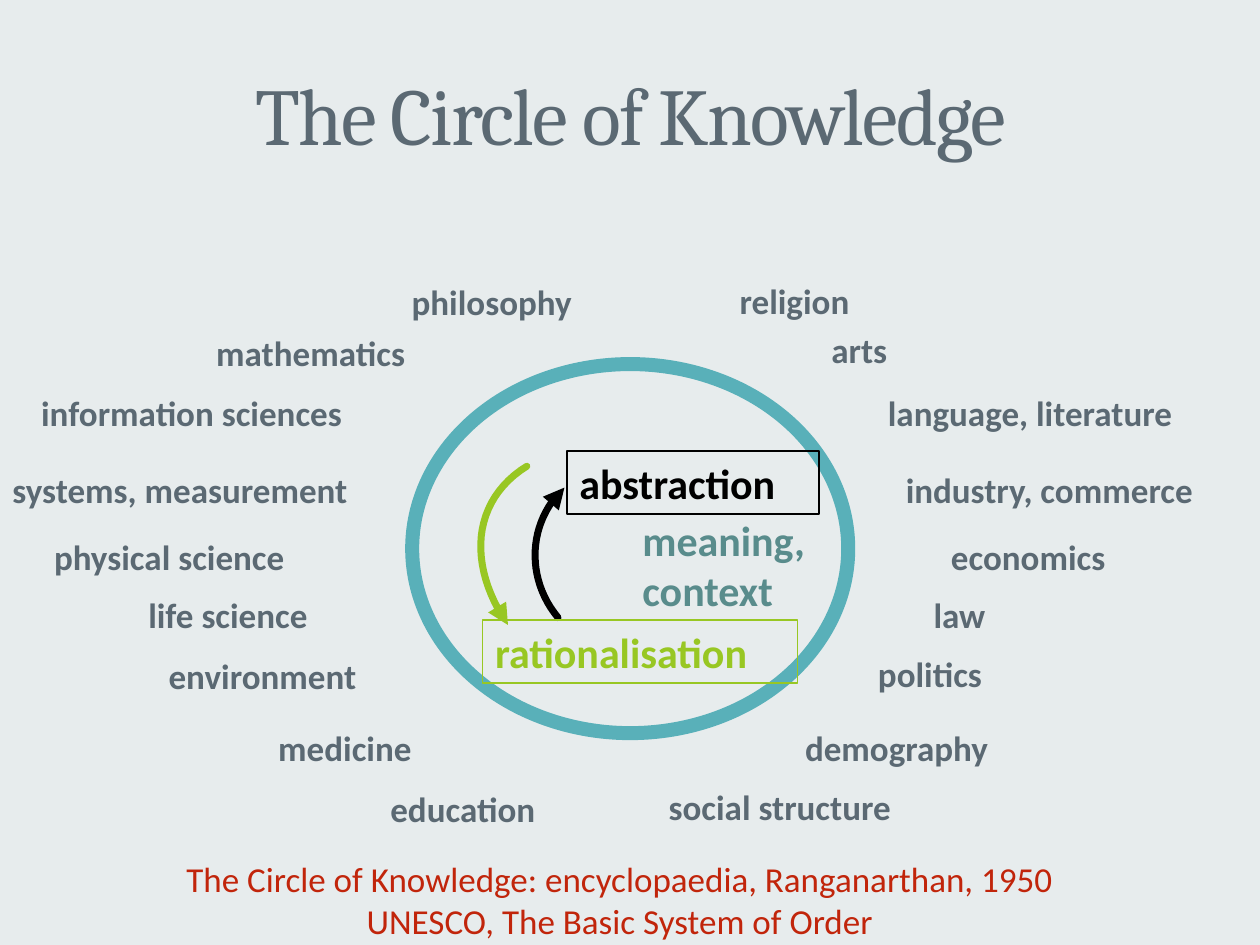
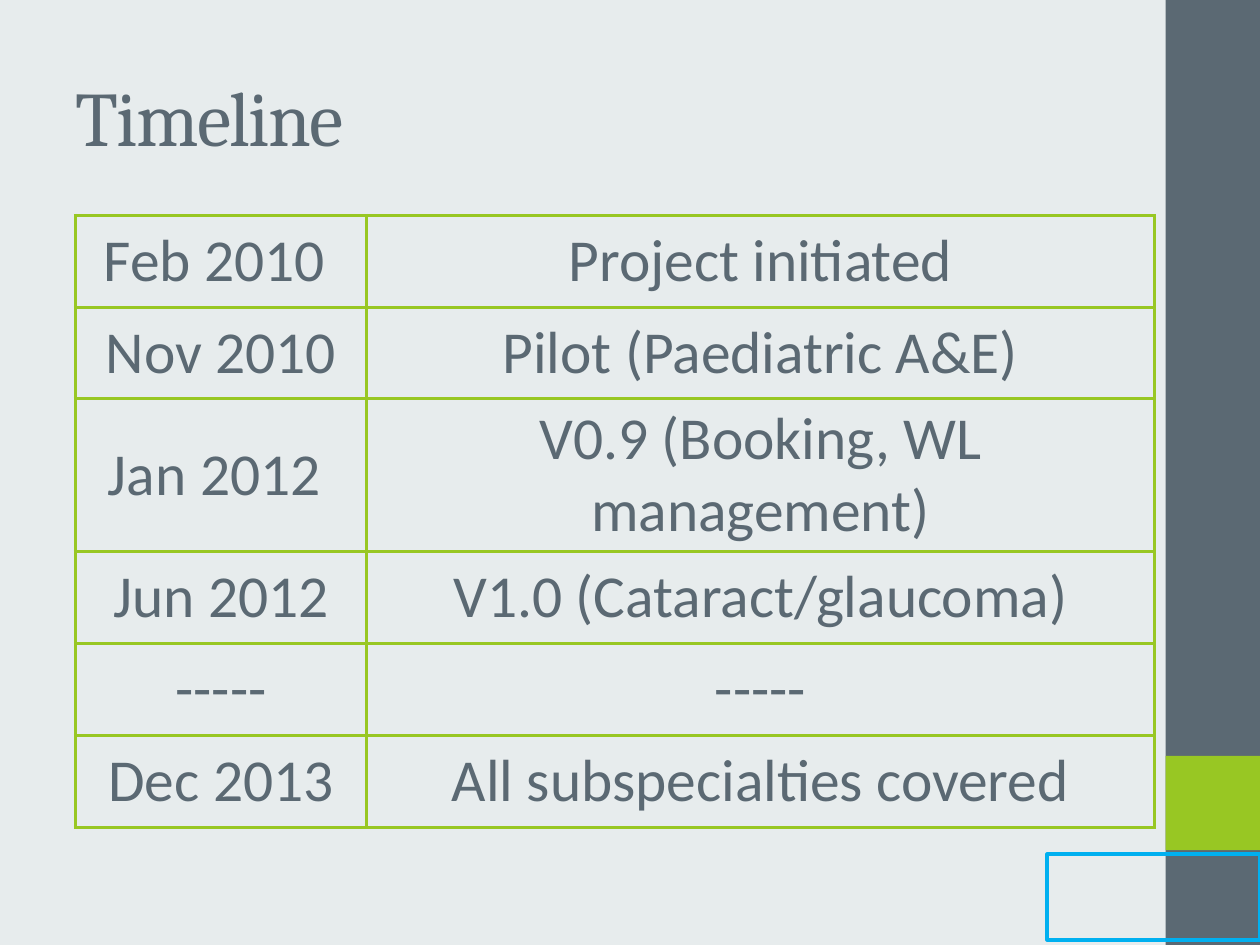
from lxml import etree
from pptx import Presentation
from pptx.dml.color import RGBColor
from pptx.enum.shapes import MSO_SHAPE
from pptx.enum.text import MSO_ANCHOR, PP_ALIGN
from pptx.oxml.ns import qn
from pptx.util import Cm, Pt

PALE = RGBColor(0xE7, 0xEC, 0xED)
SLATE = RGBColor(0x5B, 0x69, 0x73)
GREEN = RGBColor(0x98, 0xC7, 0x23)
TEAL = RGBColor(0x59, 0xB0, 0xB9)
SAGE = RGBColor(0x59, 0x8C, 0x8C)
RED = RGBColor(0xC1, 0x25, 0x0B)
BLACK = RGBColor(0, 0, 0)
SKY = RGBColor(0x00, 0xB0, 0xF0)

OVAL, RECT = MSO_SHAPE.OVAL, MSO_SHAPE.RECTANGLE
LEFT, CENTER = PP_ALIGN.LEFT, PP_ALIGN.CENTER
TOP, MIDDLE = MSO_ANCHOR.TOP, MSO_ANCHOR.MIDDLE

TITLE_ONLY = 5
ARC_STEPS = 24
LABEL_HEIGHT = 1.09

TITLE = {"name": "Cambria"}
TOPIC = {"name": "Calibri", "size": Pt(20), "bold": True}
CONCEPT = {"name": "Calibri", "size": Pt(24), "bold": True}
CAPTION = {"name": "Calibri", "size": Pt(20)}
ENTRY = {"name": "Calibri", "size": Pt(34)}

TOPIC_ROWS = [
    (("philosophy", 8.05, 0.04, 4.5), ("religion", 14.66, 0.01, 3.2)),
    (("mathematics", 4.11, 1.05, 5.31), ("arts", 16.51, 1, 2.26)),
    (("information sciences", 0.58, 2.27, 7.85), ("language, literature", 17.65, 2.27, 7.11)),
    (("systems, measurement", 0, 3.82, 9.6), ("industry, commerce", 18.01, 3.82, 7.39)),
    (("physical science", 0.84, 5.17, 7.11), ("economics", 18.92, 5.17, 4.42)),
    (("life science", 2.74, 6.34, 4.62), ("law", 18.57, 6.34, 3.4)),
    (("environment", 3.15, 7.56, 5.05), ("politics", 17.45, 7.53, 3.2)),
    (("medicine", 5.36, 9.03, 3.96), ("demography", 15.98, 9.03, 5.26)),
    (("education", 7.62, 10.25, 4.32), ("social structure", 13.23, 10.22, 6.25)),
]

MILESTONES = [
    ("Feb 2010 ", "Project initiated", 1.85),
    ("Nov 2010", "Pilot (Paediatric A&E)", 1.85),
    ("Jan 2012 ", "V0.9 (Booking, WL management)", 3),
    ("Jun 2012", "V1.0 (Cataract/glaucoma)", 1.85),
    ("-----", "-----", 1.85),
    ("Dec 2013", "All subspecialties covered", 1.85),
]


def assign(target, values):
    for name, value in values.items():
        setattr(target, name, value)


def inside(box, left, top, width, height):
    return box[0] + left, box[1] + top, width, height


def to_cm(box):
    return [Cm(length) for length in box]


def write(frame, text, font, color, align=LEFT, anchor=TOP, wrap=True):
    assign(frame, {"text": text, "word_wrap": wrap, "vertical_anchor": anchor})
    for paragraph in frame.paragraphs:
        paragraph.alignment = align
        for run in paragraph.runs:
            assign(run.font, font)
            run.font.color.rgb = color


def add_text(slide, box, text, font, color, **layout):
    label = slide.shapes.add_textbox(*to_cm(box))
    write(label.text_frame, text, font, color, **layout)


def paint(shape, fill=None, line=None, width=1):
    shape.shadow.inherit = False
    for part, color in ((shape.fill, fill), (shape.line.fill, line)):
        if color is None:
            part.background()
        else:
            part.solid()
            part.fore_color.rgb = color
    if line is not None:
        shape.line.width = Pt(width)


def add_shape(slide, box, kind=RECT, **look):
    shape = slide.shapes.add_shape(kind, *to_cm(box))
    paint(shape, **look)
    return shape


def add_title(slide, box, text, size, align):
    title = slide.shapes.title
    assign(title, dict(zip(("left", "top", "width", "height"), to_cm(box))))
    write(title.text_frame, text, TITLE | {"size": Pt(size)}, SLATE, align, MIDDLE)
    for run in title.text_frame.paragraphs[0].runs:
        run.font._element.set("spc", "-100")


def add_curved_arrow(slide, box, controls, color):
    points = []
    for step in range(ARC_STEPS + 1):
        t = step / ARC_STEPS
        weights = ((1 - t) ** 3, 3 * t * (1 - t) ** 2, 3 * t * t * (1 - t), t ** 3)
        points.append([
            Cm(origin + sum(w * c for w, c in zip(weights, axis)))
            for origin, axis in zip(box, zip(*controls))
        ])
    builder = slide.shapes.build_freeform(*points[0])
    builder.add_line_segments(points[1:], close=False)
    arrow = builder.convert_to_shape()
    paint(arrow, line=color, width=4)
    outline = arrow._element.spPr.find(qn("a:ln"))
    outline.set("cap", "rnd")
    etree.SubElement(outline, qn("a:round"))
    etree.SubElement(outline, qn("a:tailEnd"), type="triangle")


def add_topics(slide, box):
    for row in TOPIC_ROWS:
        for text, left, top, width in row:
            add_text(slide, inside(box, left, top, width, LABEL_HEIGHT), text, TOPIC, SLATE)


def add_core(slide, box):
    add_shape(slide, box, OVAL, line=TEAL, width=8)
    add_curved_arrow(slide, box, [(2.31, 2.06), (1.2, 2.75), (1.1, 4.05), (1.93, 5.26)], GREEN)
    add_curved_arrow(slide, box, [(2.94, 5.11), (2.28, 4.32), (2.33, 3.18), (3.07, 2.49)], BLACK)
    for text, color, left, top, width in (
        ("rationalisation", GREEN, 1.42, 5.16, 6.35),
        ("abstraction", BLACK, 3.12, 1.75, 5.08),
    ):
        concept = add_shape(slide, inside(box, left, top, width, 1.27), line=color)
        write(concept.text_frame, text, CONCEPT, color, anchor=MIDDLE)
    add_text(slide, inside(box, 4.39, 2.9, 3.84, 2.31), "meaning,\ncontext",
             CONCEPT, SAGE, wrap=False)


def add_side_band(slide, box):
    add_shape(slide, box, fill=SLATE)
    add_shape(slide, inside(box, 0, 15.24, box[2], box[2]), fill=GREEN)


def add_borders(cell):
    properties = cell._tc.get_or_add_tcPr()
    for position, side in enumerate(("lnL", "lnR", "lnT", "lnB")):
        border = etree.Element(qn(f"a:{side}"), w=str(Pt(2)))
        fill = etree.SubElement(border, qn("a:solidFill"))
        etree.SubElement(fill, qn("a:srgbClr"), val=str(GREEN))
        properties.insert(position, border)


def add_timeline(slide, box):
    table = slide.shapes.add_table(len(MILESTONES), 2, *to_cm(box)).table
    assign(table, {"first_row": False, "horz_banding": False})
    date_width = 5.87
    for column, width in zip(table.columns, (date_width, box[2] - date_width)):
        column.width = Cm(width)
    margins = {f"margin_{side}": Cm(0.08) for side in ("left", "right", "top", "bottom")}
    for row, (date, event, height) in zip(table.rows, MILESTONES):
        row.height = Cm(height)
        for cell, text in zip(row.cells, (date, event)):
            write(cell.text_frame, text, ENTRY, SLATE, CENTER)
            assign(cell, margins | {"vertical_anchor": MIDDLE})
            cell.fill.background()
            add_borders(cell)


def build_knowledge_slide(slide):
    add_title(slide, (1.73, 0.74, 21.97, 3.07), "The Circle of Knowledge", 46, CENTER)
    add_topics(slide, (0, 5.5, 25.4, 11.35))
    add_core(slide, (8.31, 7.34, 8.79, 7.44))
    add_text(slide, (2.54, 17.17, 19.91, 1.93),
             "The Circle of Knowledge: encyclopaedia, Ranganarthan, 1950\n"
             "UNESCO, The Basic System of Order", CAPTION, RED, align=CENTER)


def build_timeline_slide(slide):
    add_side_band(slide, (23.5, 0, 1.9, 19.05))
    add_title(slide, (1.27, 0.74, 21.16, 3.18), "Timeline", 44, LEFT)
    add_timeline(slide, (1.52, 4.34, 21.75, 12.25))
    add_shape(slide, (21.11, 17.22, 4.29, 1.73), line=SKY, width=2)


def main():
    deck = Presentation()
    assign(deck, {"slide_width": Cm(25.4), "slide_height": Cm(19.05)})
    backdrop = deck.slide_master.background.fill
    backdrop.solid()
    backdrop.fore_color.rgb = PALE
    for build in (build_knowledge_slide, build_timeline_slide):
        build(deck.slides.add_slide(deck.slide_layouts[TITLE_ONLY]))
    deck.save("out.pptx")


if __name__ == "__main__":
    main()
